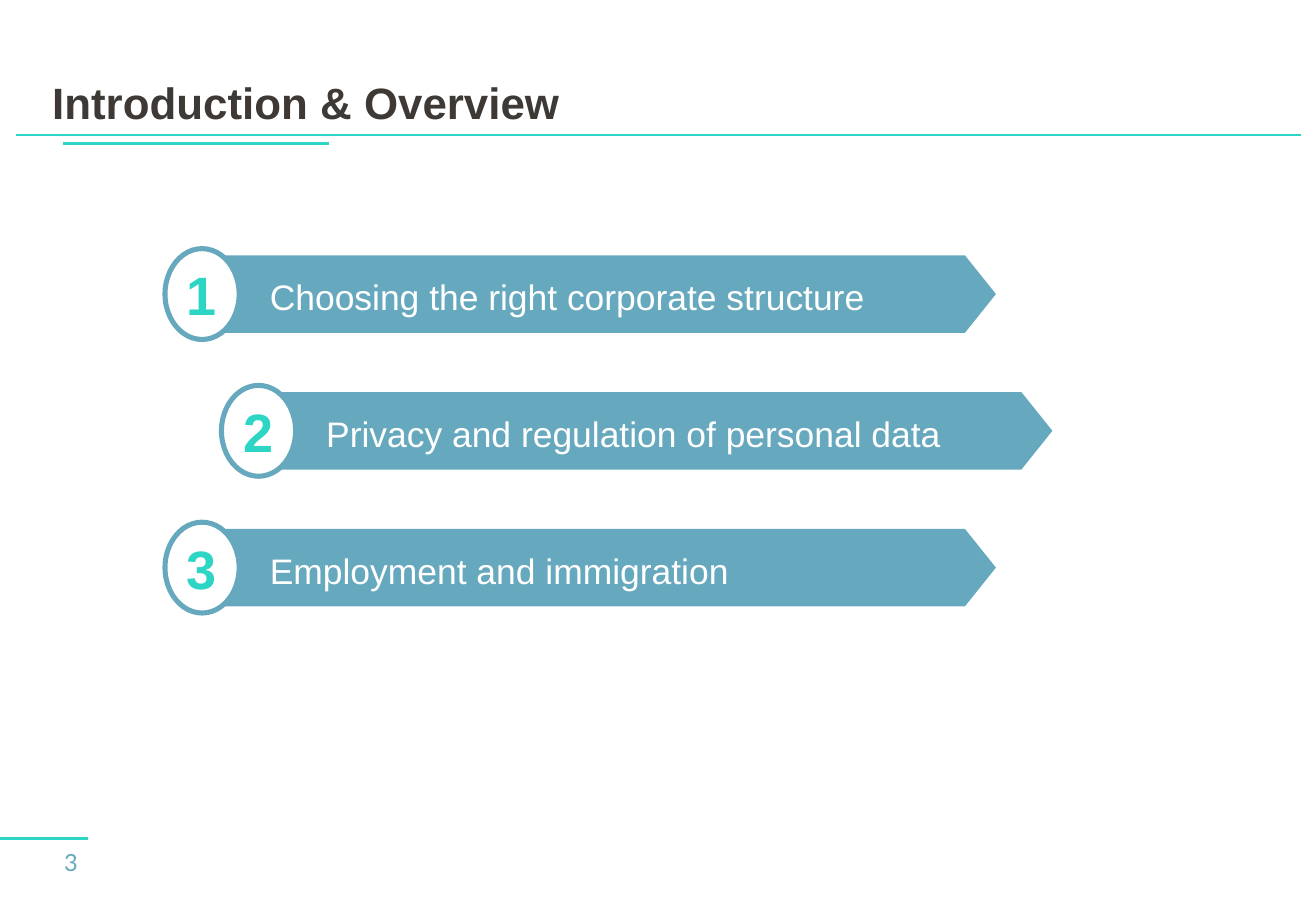
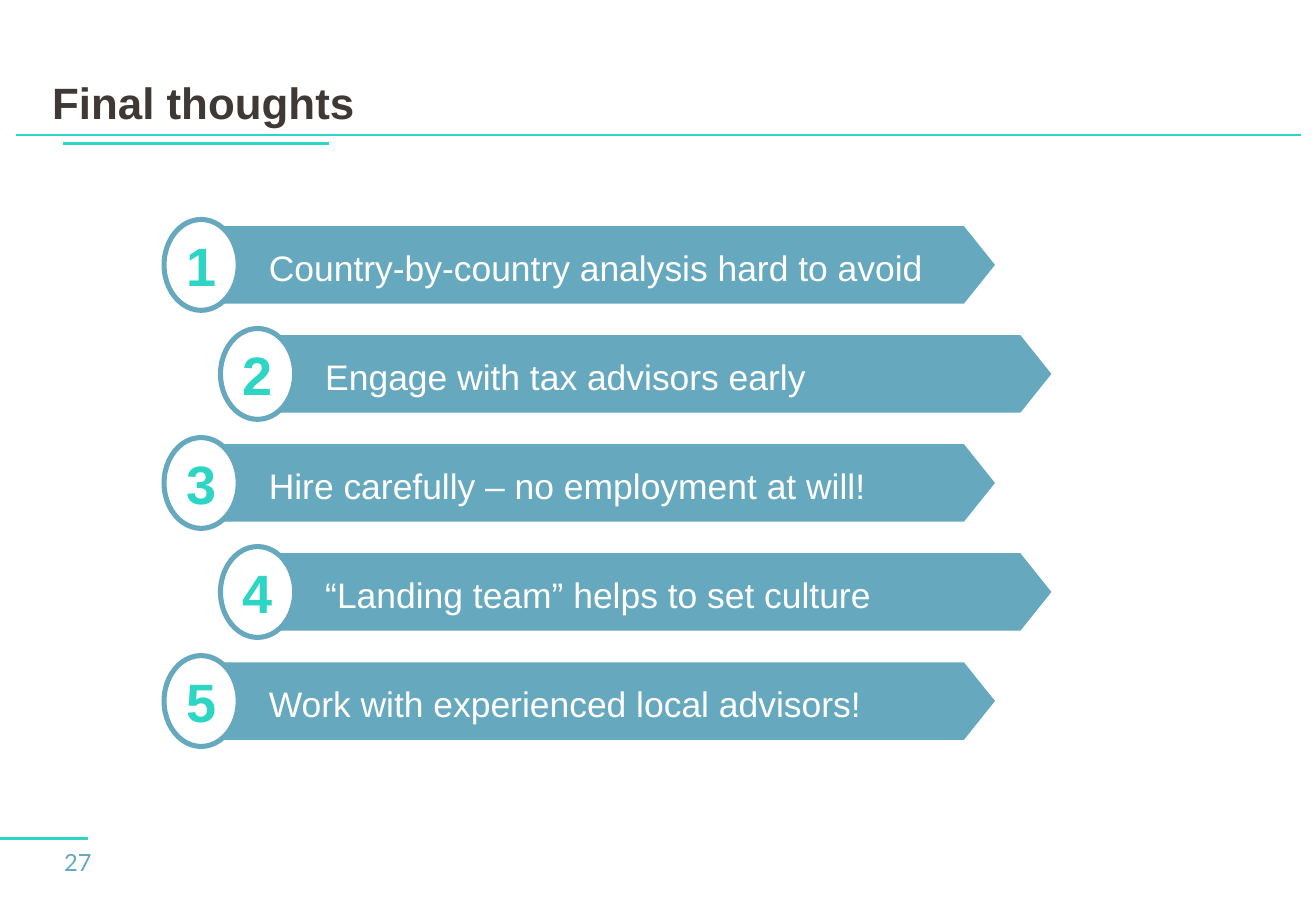
from lxml.etree import SubElement
from pptx import Presentation
from pptx.dml.color import RGBColor
from pptx.enum.shapes import MSO_CONNECTOR, MSO_SHAPE
from pptx.enum.text import MSO_ANCHOR, MSO_AUTO_SIZE, PP_ALIGN
from pptx.oxml.ns import qn
from pptx.util import Cm, Pt

COLORS = {"teal": "2CD5C4", "blue": "66A8BD", "dark": "3E3935", "white": "FFFFFF"}

FONTS = {
    "title": {"name": "Arial", "size": Pt(26), "bold": True},
    "label": {"name": "Arial", "size": Pt(21), "bold": False},
    "number": {"name": "Arial", "size": Pt(32), "bold": True},
    "page": {"name": "Lato", "size": Pt(14), "bold": False},
}

NO_MARGINS = dict.fromkeys(
    ("margin_left", "margin_top", "margin_right", "margin_bottom"), Cm(0))
FRAME = {"word_wrap": True, "auto_size": MSO_AUTO_SIZE.NONE,
         "vertical_anchor": MSO_ANCHOR.MIDDLE}

RULES = [
    (0.33, 2.82, 27.2, 1),
    (1.32, 3, 6.88, 1.5),
    (0, 17.53, 1.85, 1.5),
]

SLIDES = [
    {"title": "Introduction & Overview", "page": "3",
     "left": 3.45, "top": 5.2, "pitch": 2.86,
     "points": ["Choosing the right corporate structure",
                "Privacy and regulation of personal data",
                "Employment and immigration"]},
    {"title": "Final thoughts", "page": "27",
     "left": 3.43, "top": 4.59, "pitch": 2.28,
     "points": ["Country-by-country analysis hard to avoid",
                "Engage with tax advisors early",
                "Hire carefully – no employment at will!",
                "“Landing team” helps to set culture",
                "Work with experienced local advisors!"]},
]
INDENT = 1.18


def color(name):
    """Return the palette colour as an RGBColor."""
    return RGBColor.from_string(COLORS[name])


def write(frame, text, style, ink, align=PP_ALIGN.LEFT, **margins):
    """Fill a text frame with one formatted paragraph."""
    for key, value in {**FRAME, **margins}.items():
        setattr(frame, key, value)
    paragraph = frame.paragraphs[0]
    paragraph.text = text
    paragraph.alignment = align
    font = paragraph.runs[0].font
    for key, value in FONTS[style].items():
        setattr(font, key, value)
    font.color.rgb = color(ink)


def add_rule(slide, left, top, right, weight):
    """Draw a horizontal teal rule."""
    rule = slide.shapes.add_connector(
        MSO_CONNECTOR.STRAIGHT, Cm(left), Cm(top), Cm(right), Cm(top))
    rule.line.color.rgb = color("teal")
    rule.line.width = Pt(weight)
    SubElement(rule._element.spPr, qn("a:effectLst"))


def add_preset(slide, preset, left, top, width, height, fill):
    """Add a flat preset shape without an outline."""
    shape = slide.shapes.add_shape(preset, Cm(left), Cm(top), Cm(width), Cm(height))
    shape.shadow.inherit = False
    shape.fill.solid()
    shape.fill.fore_color.rgb = color(fill)
    shape.line.fill.background()
    return shape


def add_frame(slide, title, page):
    """Add the rules, title and page number shared by all slides."""
    for rule in RULES:
        add_rule(slide, *rule)
    heading = slide.shapes.title
    place = {"left": Cm(1.09), "top": Cm(1.02), "width": Cm(25.27), "height": Cm(2.24)}
    for key, value in place.items():
        setattr(heading, key, value)
    write(heading.text_frame, title, "title", "dark", **NO_MARGINS)
    page_box = slide.shapes.add_textbox(Cm(1.09), Cm(17.73), Cm(1.17), Cm(0.61))
    write(page_box.text_frame, page, "page", "blue")


def add_point(slide, left, top, number, label):
    """Add a numbered arrow bar whose badge starts at left, top."""
    bar = add_preset(slide, MSO_SHAPE.PENTAGON, left + 0.76, top + 0.14, 16.61, 1.62, "blue")
    bar.adjustments[0] = 0.4
    write(bar.text_frame, label, "label", "white",
          **{**NO_MARGINS, "margin_left": Cm(1.43), "margin_top": Cm(0.1)})
    badge = add_preset(slide, MSO_SHAPE.OVAL, left, top, 1.55, 1.9, "white")
    badge.line.color.rgb = color("blue")
    badge.line.width = Pt(3)
    write(badge.text_frame, str(number), "number", "teal", PP_ALIGN.CENTER, **NO_MARGINS)


def add_points_slide(deck, title, page, left, top, pitch, points):
    """Add a slide of numbered points, every second one indented."""
    slide = deck.slides.add_slide(deck.slide_layouts.get_by_name("Title Only"))
    add_frame(slide, title, page)
    for row, label in enumerate(points):
        add_point(slide, left + row % 2 * INDENT, top + row * pitch, row + 1, label)


def main():
    """Build and save the deck."""
    deck = Presentation()
    deck.slide_width, deck.slide_height = Cm(27.51), Cm(19.05)
    for content in SLIDES:
        add_points_slide(deck, **content)
    deck.save("out.pptx")


if __name__ == "__main__":
    main()
